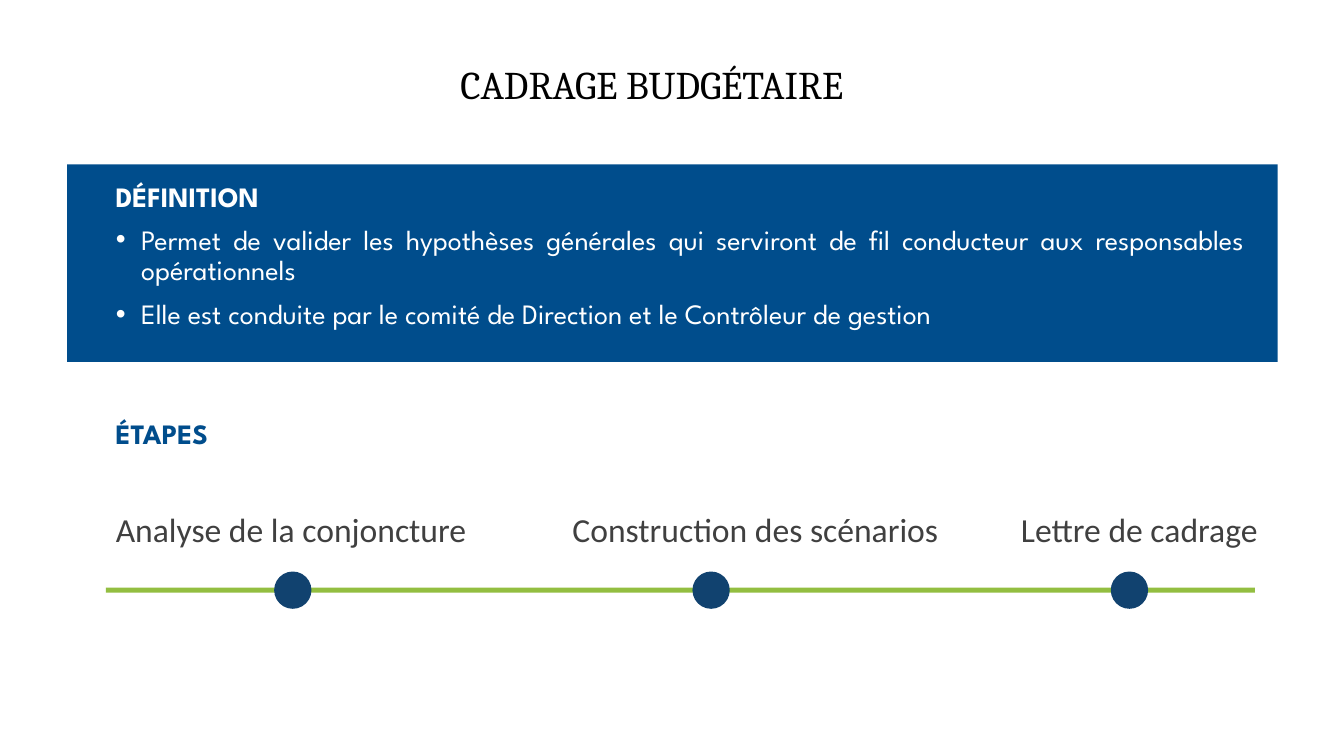
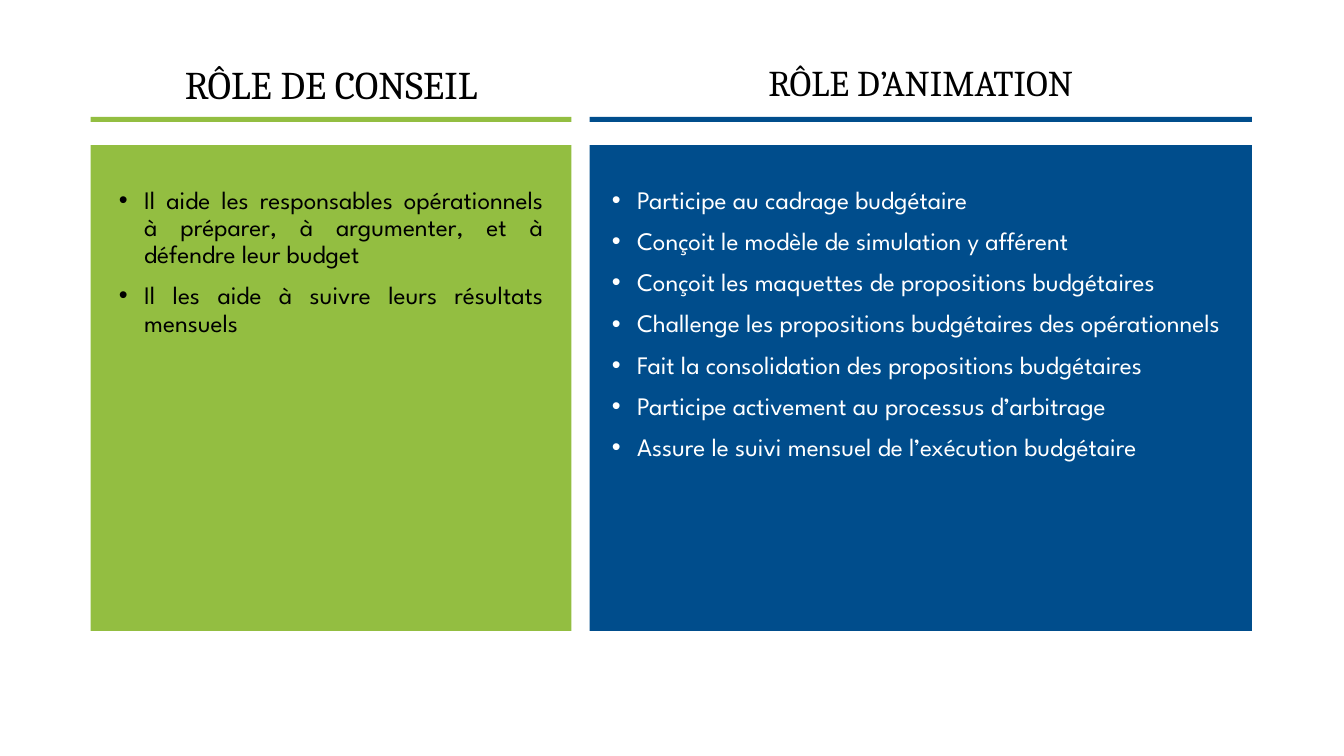
from dataclasses import dataclass

from lxml.etree import SubElement
from pptx import Presentation
from pptx.dml.color import RGBColor
from pptx.enum.shapes import MSO_SHAPE
from pptx.enum.text import MSO_ANCHOR, MSO_AUTO_SIZE, PP_ALIGN
from pptx.oxml.ns import qn
from pptx.util import Inches, Pt


@dataclass(frozen=True)
class Theme:
    blue: str = "004D8C"
    green: str = "93BE41"
    navy: str = "11426F"
    black: str = "000000"
    white: str = "FFFFFF"
    grey: str = "404040"
    heading_font: str = "Cambria"
    body_font: str = "League Spartan"
    step_font: str = "Calibri"
    heading_size: float = 28
    side_heading_size: float = 25.9
    step_size: float = 24
    body_size: float = 20
    list_size: float = 18
    line_spacing: float = 0.9
    title_spacing: float = 0.8
    step_spacing: float = 1.07
    paragraph_gap: float = 10
    bullet_indent: float = 0.25


THEME = Theme()
COLUMNS, ROWS = 80, 45


def write_text(frame, *lines, font, size, color, bold=False, align=PP_ALIGN.LEFT,
               anchor=MSO_ANCHOR.TOP, spacing=THEME.line_spacing, bullet=False, wrap=True):
    frame.auto_size = MSO_AUTO_SIZE.NONE
    frame.word_wrap = wrap
    frame.vertical_anchor = anchor
    for index, line in enumerate(lines):
        paragraph = frame.add_paragraph() if index else frame.paragraphs[0]
        paragraph.alignment = align
        paragraph.line_spacing = spacing
        paragraph.space_before = Pt(THEME.paragraph_gap if index else 0)
        if bullet:
            properties = paragraph._p.get_or_add_pPr()
            indent = Inches(THEME.bullet_indent)
            properties.set("marL", str(indent))
            properties.set("indent", str(-indent))
            SubElement(properties, qn("a:buFont"), typeface="Arial")
            SubElement(properties, qn("a:buChar"), char="•")
        run = paragraph.add_run()
        run.text = line
        run.font.name = font
        run.font.size = Pt(size)
        run.font.bold = bold
        run.font.color.rgb = RGBColor.from_string(color)


class Deck:
    def __init__(self, theme):
        self.theme = theme
        self.presentation = Presentation()
        self.presentation.slide_width = Inches(13.33)
        self.presentation.slide_height = Inches(7.5)
        self.slide = None

    def start(self, layout):
        layouts = self.presentation.slide_layouts
        self.slide = self.presentation.slides.add_slide(layouts.get_by_name(layout))

    def area(self, left, top, width, height):
        column = self.presentation.slide_width / COLUMNS
        row = self.presentation.slide_height / ROWS
        return [round(length) for length in
                (left * column, top * row, width * column, height * row)]

    def place(self, placeholder, area):
        (placeholder.left, placeholder.top,
         placeholder.width, placeholder.height) = self.area(*area)
        return placeholder.text_frame

    def title(self, text, area, **changes):
        style = dict(font=self.theme.heading_font, size=self.theme.heading_size,
                     color=self.theme.black, align=PP_ALIGN.CENTER)
        write_text(self.place(self.slide.shapes.title, area), text, **(style | changes))

    def bullets(self, position, items, area, **changes):
        style = dict(font=self.theme.body_font, size=self.theme.list_size,
                     color=self.theme.white, align=PP_ALIGN.JUSTIFY, bullet=True)
        frame = self.place(self.slide.placeholders[position], area)
        write_text(frame, *items, **(style | changes))

    def label(self, text, area, **style):
        box = self.slide.shapes.add_textbox(*self.area(*area))
        write_text(box.text_frame, text, **style)

    def section(self, text, area, color):
        self.label(text, area, font=self.theme.body_font, size=self.theme.body_size,
                   color=color, bold=True, anchor=MSO_ANCHOR.MIDDLE)

    def block(self, area, color, outline=MSO_SHAPE.RECTANGLE):
        shape = self.slide.shapes.add_shape(outline, *self.area(*area))
        shape.shadow.inherit = False
        shape.fill.solid()
        shape.fill.fore_color.rgb = RGBColor.from_string(color)
        shape.line.fill.background()
        return shape

    def panel(self, area, color):
        element = self.block(area, color).element
        element.getparent().insert(2, element)


def budget_framing(deck):
    theme = deck.theme
    margin, content_width, label_height = 6.3, 68.4, 2.94
    deck.start("Title and Content")
    deck.title("CADRAGE BUDGÉTAIRE", (26.16, 3.84, 25.26, label_height),
               spacing=theme.title_spacing)
    deck.panel((4, 9.78, 72.06, 11.76), theme.blue)
    deck.section("DÉFINITION", (margin, 10.32, 11.64, label_height), theme.white)
    deck.bullets(1, (
        "Permet de valider les hypothèses générales qui serviront de fil conducteur "
        "aux responsables opérationnels",
        "Elle est conduite par le comité de Direction et le Contrôleur de gestion",
    ), (margin, 13.14, content_width, 6.84), size=theme.body_size, anchor=MSO_ANCHOR.MIDDLE)
    deck.section("ÉTAPES", (margin, 24.42, 8.28, label_height), theme.blue)

    axis, thickness, dot = 35.13, 0.3, 2.22
    deck.block((margin, axis - thickness / 2, content_width, thickness), theme.green)
    steps = (
        ("Analyse de la conjoncture", margin, 22.26),
        ("Construction des scénarios", 33.48, 23.22),
        ("Lettre de cadrage", 60.18, 15.96),
    )
    for index, (step, left, width) in enumerate(steps):
        deck.label(step, (left, 29.82, width, 3.18), font=theme.step_font,
                   size=theme.step_size, color=theme.grey,
                   spacing=theme.step_spacing, wrap=False)
        deck.block((16.32 + 24.9 * index, axis - dot / 2, dot, dot),
                   theme.navy, MSO_SHAPE.OVAL)


def controller_roles(deck):
    theme = deck.theme
    advice = (
        "Il aide les responsables opérationnels à préparer, à argumenter, "
        "et à défendre leur budget",
        "Il les aide à suivre leurs résultats mensuels",
    )
    animation = (
        "Participe au cadrage budgétaire",
        "Conçoit le modèle de simulation y afférent",
        "Conçoit les maquettes de propositions budgétaires",
        "Challenge les propositions budgétaires des opérationnels",
        "Fait la consolidation des propositions budgétaires",
        "Participe activement au processus d’arbitrage",
        "Assure le suivi mensuel de l’exécution budgétaire",
    )
    roles = (
        (1, advice, 5.4, 28.62, 1.08, 12.6, theme.green, theme.black),
        (2, animation, 35.1, 39.42, 0.72, 25.08, theme.blue, theme.white),
    )
    deck.start("Two Content")
    heading_areas = []
    for position, duties, left, width, inset, height, fill, ink in roles:
        deck.panel((left, 8.64, width, 28.92), fill)
        deck.block((left, 6.96, width, 0.3), fill)
        deck.bullets(position, duties, (left + inset, 10.86, width - 2 * inset, height),
                     color=ink)
        heading_width = 20.46
        heading_areas.append((left + (width - heading_width) / 2, 3.6, heading_width, 3.48))
    deck.title("RÔLE DE CONSEIL", heading_areas[0])
    deck.label("RÔLE D’ANIMATION", heading_areas[1], font=theme.heading_font,
               size=theme.side_heading_size, color=theme.black, align=PP_ALIGN.CENTER)


def main():
    deck = Deck(THEME)
    budget_framing(deck)
    controller_roles(deck)
    deck.presentation.save("out.pptx")


if __name__ == "__main__":
    main()
